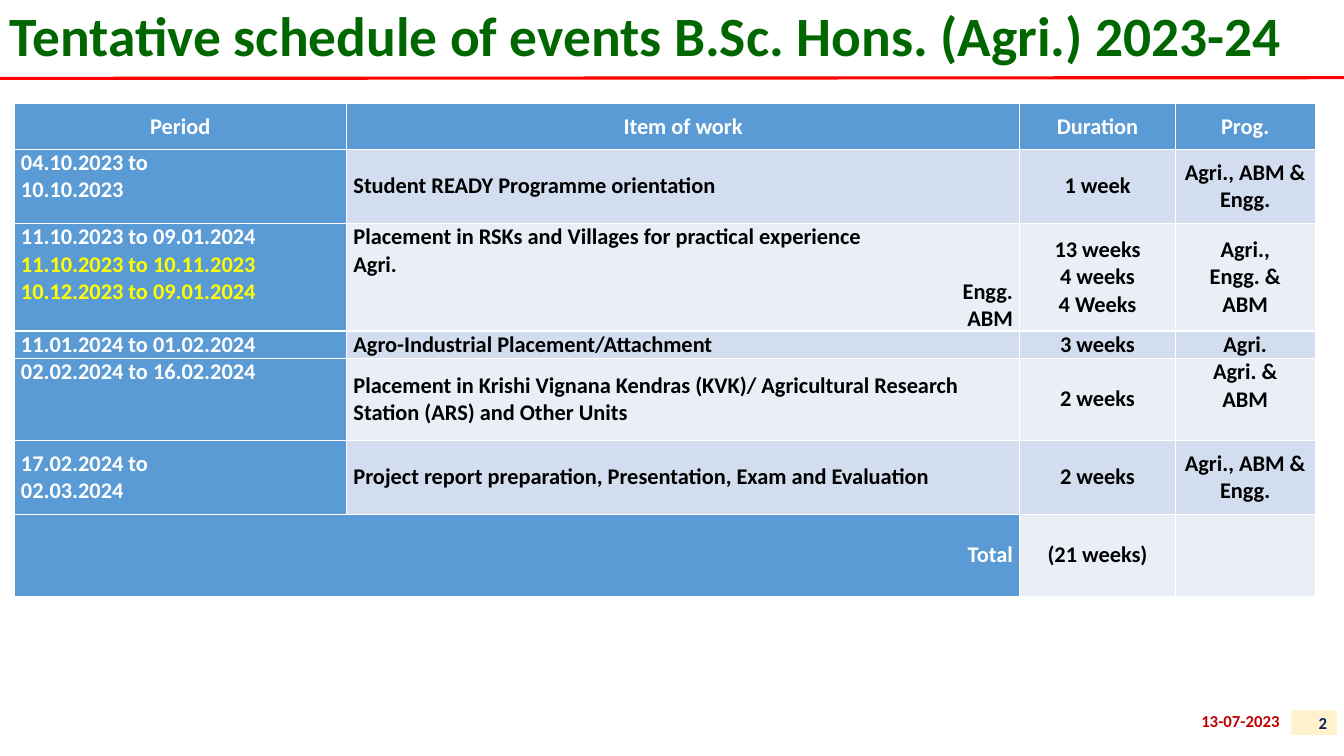
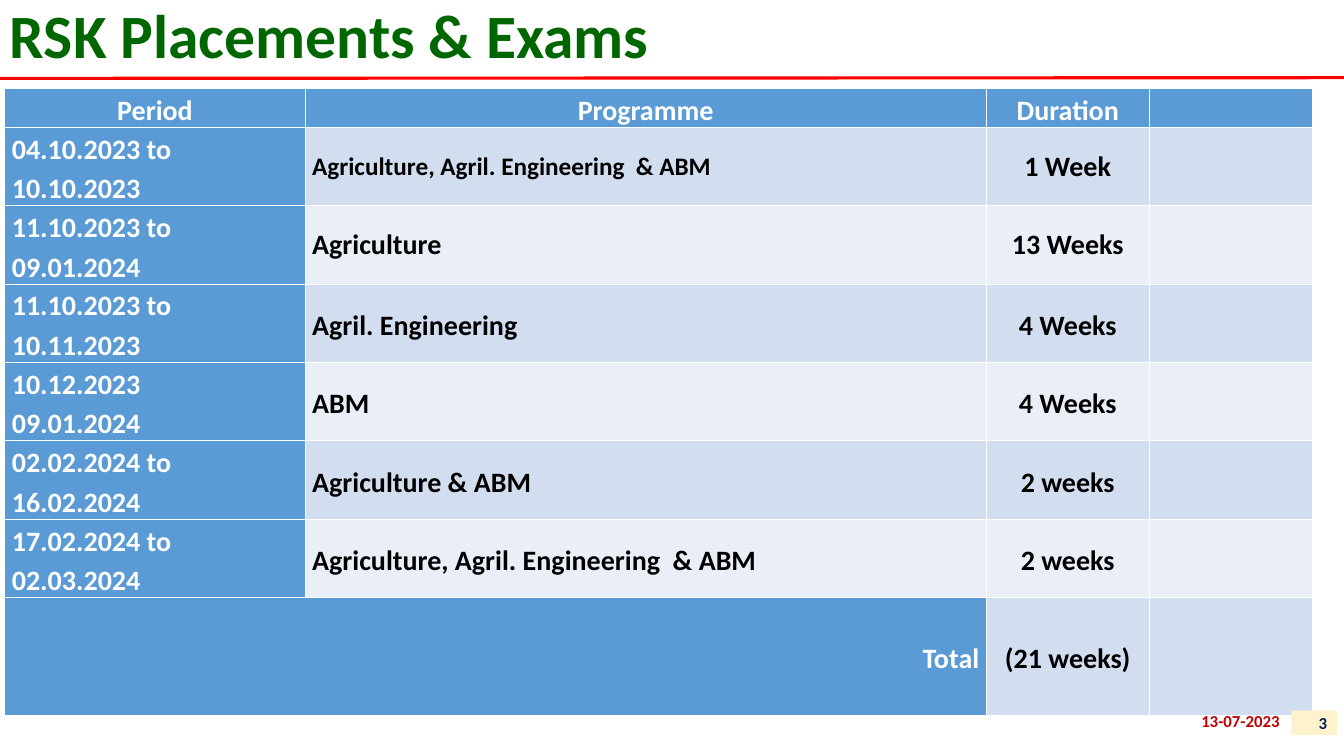
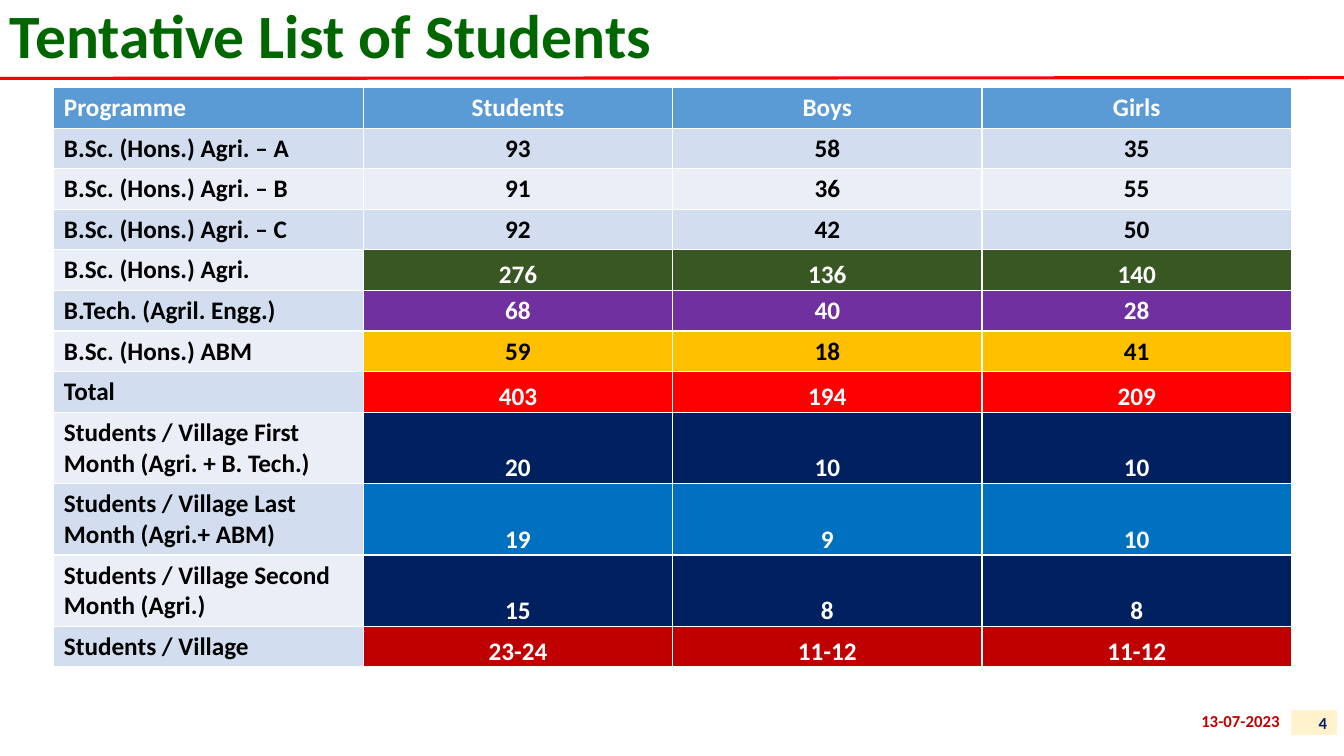
from dataclasses import dataclass, replace
from typing import Callable

from pptx import Presentation
from pptx.dml.color import RGBColor as RGB
from pptx.enum.shapes import MSO_CONNECTOR as Line, MSO_SHAPE as Shape
from pptx.enum.text import MSO_ANCHOR as Anchor, PP_ALIGN as Align
from pptx.oxml import parse_xml
from pptx.oxml.ns import nsdecls
from pptx.util import Pt

WHITE = RGB(0xFF, 0xFF, 0xFF)
BLACK = RGB(0x00, 0x00, 0x00)
RED = RGB(0xFF, 0x00, 0x00)
GREEN = RGB(0x00, 0x66, 0x00)
YELLOW = RGB(0xFF, 0xFF, 0x00)
CRIMSON = RGB(0xC0, 0x00, 0x00)
NAVY = RGB(0x00, 0x20, 0x60)
CREAM = RGB(0xFF, 0xF2, 0xCC)
BLUE = RGB(0x5B, 0x9B, 0xD5)
BANDS = RGB(0xEA, 0xEF, 0xF7), RGB(0xD2, 0xDE, 0xEF)
FOREST = RGB(0x38, 0x57, 0x23)
PURPLE = RGB(0x70, 0x30, 0xA0)
AMBER = RGB(0xFF, 0xC0, 0x00)
AZURE = RGB(0x00, 0x70, 0xC0)

FONT = "Calibri"
WIDTH, HEIGHT = 960, 540
DATE = "13-07-2023"


@dataclass(frozen=True)
class Look:
    fill: RGB
    ink: RGB = BLACK
    size: float = 16
    align: Align = Align.CENTER
    anchor: Anchor = Anchor.MIDDLE
    gap: float = 1.0
    pads: tuple[float, float, float, float] = (5, 0, 5, 0)


@dataclass(frozen=True)
class Grid:
    left: float
    top: float
    cols: list[float]
    rows: list[float]
    cells: list[tuple[str, ...]]
    look: Callable[[int, int], Look]


def style(frame, size: float, ink: RGB, align: Align = Align.LEFT, gap: float = 1.0) -> None:
    for para in frame.paragraphs:
        para.alignment = align
        para.line_spacing = gap
        para.font.size = Pt(size)
        para.font.name = FONT
        para.font.bold = True
        para.font.color.rgb = ink


def add_text(slide, text: str, box: tuple, size: float, ink: RGB, gap: float = 1.0) -> None:
    frame = slide.shapes.add_textbox(*map(Pt, box)).text_frame
    frame.word_wrap = True
    frame.vertical_anchor = Anchor.MIDDLE
    frame.text = text
    style(frame, size, ink, gap=gap)


def add_page(deck, title: str, size: float = 44):
    """Add a slide with its title and the red rule below."""
    slide = deck.slides.add_slide(deck.slide_layouts[6])
    rule = slide.shapes.add_connector(Line.STRAIGHT, Pt(0), Pt(56), Pt(WIDTH), Pt(55.5))
    rule.line.color.rgb = RED
    rule.line.width = Pt(2.25)
    rule._element.spPr.append(parse_xml(f"<a:effectLst {nsdecls('a')}/>"))
    add_text(slide, title, (0, 0, WIDTH, 55.5), size, GREEN, 0.9)
    return slide


def add_foot(slide, page: int) -> None:
    add_text(slide, DATE, (851, 500.5, 71.5, 29), 12, CRIMSON)
    badge = slide.shapes.add_shape(Shape.RECTANGLE, Pt(922.5), Pt(507.5), Pt(32.5), Pt(17.5))
    badge.shadow.inherit = False
    badge.fill.solid()
    badge.fill.fore_color.rgb = CREAM
    badge.line.fill.background()
    frame = badge.text_frame
    frame.vertical_anchor = Anchor.MIDDLE
    frame.text = str(page)
    style(frame, 12, NAVY, Align.RIGHT)


def add_grid(slide, grid: Grid):
    shape = slide.shapes.add_table(
        len(grid.rows), len(grid.cols), Pt(grid.left), Pt(grid.top),
        Pt(sum(grid.cols)), Pt(sum(grid.rows)))
    table = shape.table
    for col, width in zip(table.columns, grid.cols):
        col.width = Pt(width)
    for row, height in zip(table.rows, grid.rows):
        row.height = Pt(height)
    for r, texts in enumerate(grid.cells):
        for c, text in enumerate(texts):
            cell, look = table.cell(r, c), grid.look(r, c)
            cell.fill.solid()
            cell.fill.fore_color.rgb = look.fill
            cell.vertical_anchor = look.anchor
            (cell.margin_left, cell.margin_top,
             cell.margin_right, cell.margin_bottom) = map(Pt, look.pads)
            cell.text_frame.text = text
            style(cell.text_frame, look.size, look.ink, look.align, look.gap)
    return table


def plan_look(r: int, c: int, last: int) -> Look:
    """Look shared by both schedules: blue head, first column and total."""
    head = Look(BLUE, WHITE)
    if r == 0:
        return head
    if r == last and c < 2:
        return replace(head, align=Align.RIGHT)
    if c == 0:
        return replace(head, align=Align.LEFT, anchor=Anchor.TOP)
    return Look(BANDS[r % 2], align=Align.LEFT if c == 1 else Align.CENTER)


def event_look(r: int, c: int) -> Look:
    look = plan_look(r, c, 6)
    if (r, c) == (5, 0):
        return replace(look, anchor=Anchor.MIDDLE)
    if (r, c) == (4, 3):
        return replace(look, anchor=Anchor.TOP)
    return look


def exam_look(r: int, c: int) -> Look:
    tight = r in (1, 2) and c > 0
    size = 18 if (r, c) == (1, 1) else 20
    return replace(plan_look(r, c, 7), size=size, gap=1.0 if tight else 1.15)


TINTS = {4: FOREST, 5: PURPLE, 6: AMBER, 7: RED, 8: NAVY, 9: AZURE, 10: NAVY, 11: CRIMSON}


def count_look(r: int, c: int) -> Look:
    look = Look(BANDS[r % 2], size=18, align=Align.CENTER if c else Align.LEFT,
                anchor=Anchor.TOP, pads=(7.2, 3.6, 7.2, 3.6))
    if r == 0:
        return replace(look, fill=BLUE, ink=WHITE)
    if c == 0 or r not in TINTS:
        return look
    look = replace(look, fill=TINTS[r], ink=BLACK if r == 6 else WHITE)
    if r in (5, 6):
        return look
    return replace(look, anchor=Anchor.BOTTOM, pads=(0.7, 0.7, 0.7, 0))


EVENTS = Grid(10, 74, [237.5, 481, 111, 100], [32.5, 53, 77, 19.5, 58.5, 53, 58.5], [
    ("Period", "Item of work", "Duration", "Prog."),
    ("04.10.2023 to\n10.10.2023", "Student READY Programme orientation",
     "1 week", "Agri., ABM & Engg."),
    ("11.10.2023 to 09.01.2024\n11.10.2023 to 10.11.2023\n10.12.2023 to 09.01.2024",
     "Placement in RSKs and Villages for practical experience\nAgri.\nEngg.\nABM",
     "13 weeks\n4 weeks\n4 Weeks", "Agri.,\nEngg. &\nABM"),
    ("11.01.2024 to 01.02.2024", "Agro-Industrial Placement/Attachment", "3 weeks", "Agri."),
    ("02.02.2024 to 16.02.2024",
     "Placement in Krishi Vignana Kendras (KVK)/ Agricultural Research "
     "Station (ARS) and Other Units", "2 weeks", "Agri. &\nABM"),
    ("17.02.2024 to\n02.03.2024",
     "Project report preparation, Presentation, Exam and Evaluation",
     "2 weeks", "Agri., ABM & Engg."),
    ("Total", "", "(21 weeks)", ""),
], event_look)

EXAMS = Grid(3.5, 63, [214.5, 486.5, 116.5, 116.5], [28] + [56] * 6 + [84], [
    ("Period", "Programme", "Duration", ""),
    ("04.10.2023 to\n10.10.2023", "Agriculture, Agril. Engineering  & ABM", "1 Week", ""),
    ("11.10.2023 to 09.01.2024", "Agriculture", "13 Weeks", ""),
    ("11.10.2023 to 10.11.2023", "Agril. Engineering", "4 Weeks", ""),
    ("10.12.2023\n09.01.2024", "ABM", "4 Weeks", ""),
    ("02.02.2024 to 16.02.2024", "Agriculture & ABM", "2 weeks", ""),
    ("17.02.2024 to\n02.03.2024", "Agriculture, Agril. Engineering  & ABM", "2 weeks", ""),
    ("Total", "", "(21 weeks)", ""),
], exam_look)

COUNTS = Grid(38.5, 62.5, [221] * 4, [29] * 8 + [51] * 3 + [29], [
    ("Programme", "Students", "Boys", "Girls"),
    ("B.Sc. (Hons.) Agri. – A", "93", "58", "35"),
    ("B.Sc. (Hons.) Agri. – B", "91", "36", "55"),
    ("B.Sc. (Hons.) Agri. – C", "92", "42", "50"),
    ("B.Sc. (Hons.) Agri.", "276", "136", "140"),
    ("B.Tech. (Agril. Engg.)", "68", "40", "28"),
    ("B.Sc. (Hons.) ABM", "59", "18", "41"),
    ("Total", "403", "194", "209"),
    ("Students / Village First Month (Agri. + B. Tech.)", "20", "10", "10"),
    ("Students / Village Last Month (Agri.+ ABM)", "19", "9", "10"),
    ("Students / Village Second Month (Agri.)", "15", "8", "8"),
    ("Students / Village", "23-24", "11-12", "11-12"),
], count_look)


def join_total(table) -> None:
    last = len(table.rows) - 1
    table.cell(last, 0).merge(table.cell(last, 1))


def main() -> None:
    deck = Presentation()
    deck.slide_width, deck.slide_height = Pt(WIDTH), Pt(HEIGHT)

    slide = add_page(deck, "Tentative schedule of events B.Sc. Hons. (Agri.) 2023-24", 39.6)
    table = add_grid(slide, EVENTS)
    join_total(table)
    for para in table.cell(2, 0).text_frame.paragraphs[1:]:
        para.font.color.rgb = YELLOW
    for para in table.cell(2, 1).text_frame.paragraphs[2:]:
        para.alignment = Align.RIGHT
    add_foot(slide, 2)

    slide = add_page(deck, "RSK Placements & Exams")
    join_total(add_grid(slide, EXAMS))
    add_foot(slide, 3)

    slide = add_page(deck, "Tentative List of Students")
    add_grid(slide, COUNTS)
    add_foot(slide, 4)

    deck.save("out.pptx")


if __name__ == "__main__":
    main()
